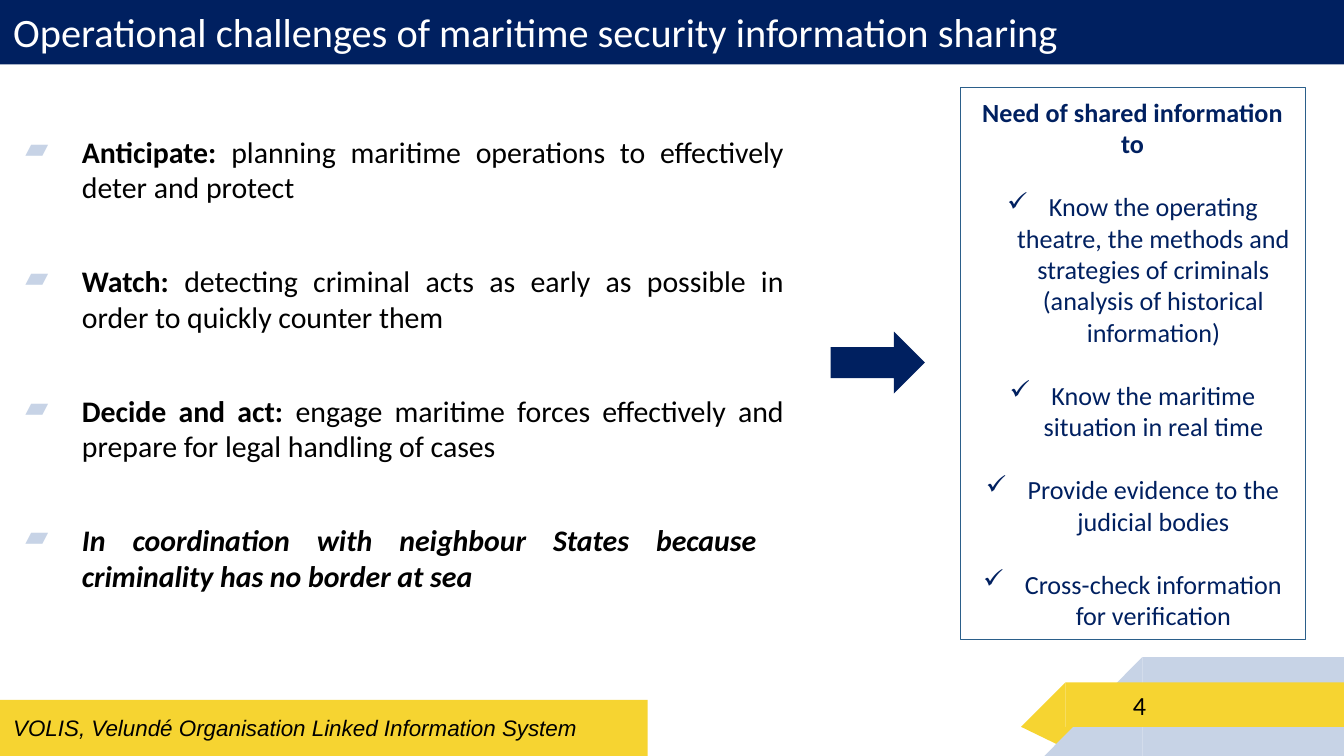
"""Build the slide on the operational challenges of maritime information sharing."""
from lxml.etree import SubElement
from pptx import Presentation
from pptx.dml.color import RGBColor
from pptx.enum.shapes import MSO_SHAPE
from pptx.enum.text import MSO_ANCHOR, MSO_AUTO_SIZE, PP_ALIGN
from pptx.oxml.ns import qn
from pptx.util import Cm, Pt

NAVY, YELLOW, PALE = "002060", "F6D431", "C7D3E6"
WHITE, BLACK, STEEL = "FFFFFF", "000000", "2B5F8A"


def draw(kind, left, top, width, height, fill, flip=False):
    shape = page.shapes.add_shape(kind, Cm(left), Cm(top), Cm(width), Cm(height))
    shape.shadow.inherit = False
    shape.fill.solid()
    shape.fill.fore_color.rgb = RGBColor.from_string(fill)
    shape.line.fill.background()
    if flip:
        shape.element.spPr.get_or_add_xfrm().set("flipH", "1")
    return shape


def write(box, text, lead="", size=14, color=BLACK, font="Calibri", bold=False,
          italic=False, align=PP_ALIGN.LEFT, before=0, bullet=None,
          bullet_color=None, indent=0, hanging=0):
    frame = box.text_frame
    frame.word_wrap = True
    frame.auto_size = MSO_AUTO_SIZE.NONE
    frame.vertical_anchor = MSO_ANCHOR.MIDDLE
    para = frame.add_paragraph() if frame.text else frame.paragraphs[0]
    para.alignment = align
    para.space_before = Pt(before)
    for words, heavy in ((lead, True), (text, bold)):
        if words:
            span = para.add_run()
            span.text = words
            span.font.name = font
            span.font.size = Pt(size)
            span.font.bold = heavy
            span.font.italic = italic
            span.font.color.rgb = RGBColor.from_string(color)
    if bullet:
        properties = para._p.get_or_add_pPr()
        properties.set("marL", str(Cm(indent)))
        properties.set("indent", str(-Cm(hanging)))
        tint = SubElement(properties, qn("a:buClr"))
        SubElement(tint, qn("a:srgbClr"), val=bullet_color or color)
        SubElement(properties, qn("a:buChar"), char=bullet)


deck = Presentation()
deck.slide_width, deck.slide_height = Cm(25.4), Cm(14.29)
page = deck.slides.add_slide(deck.slide_layouts[5])

fold = draw(MSO_SHAPE.ISOSCELES_TRIANGLE, 19.3, 13.74, 1.09, 0.36, YELLOW)
fold.adjustments[0] = 0.32
fold.rotation = 180
for slant_left, top, slant, height, color in (
    (19.74, 12.42, 1.85, 1.87, PALE),
    (19.3, 12.9, 0.84, 0.84, YELLOW),
):
    bar_left = slant_left + slant
    draw(MSO_SHAPE.RECTANGLE, bar_left, top, 25.4 - bar_left, height, color)
    draw(MSO_SHAPE.RIGHT_TRIANGLE, slant_left, top, slant, height, color, flip=True)

footer = draw(MSO_SHAPE.RECTANGLE, 0, 13.23, 12.24, 1.06, YELLOW)
write(footer, "VOLIS, Velundé Organisation Linked Information System",
      size=12, font="Arial", italic=True)

title = page.shapes.title
title.left, title.top, title.width, title.height = Cm(0), Cm(-0.03), Cm(25.4), Cm(1.25)
title.fill.solid()
title.fill.fore_color.rgb = RGBColor.from_string(NAVY)
write(title, "Operational challenges of maritime security information sharing",
      size=21.6, color=WHITE)

challenges = page.shapes.add_textbox(Cm(0.03), Cm(2.16), Cm(15.04), Cm(9.42))
for number, (lead, text) in enumerate((
    ("Anticipate: ", "planning maritime operations to effectively deter and protect"),
    ("Watch:", " detecting criminal acts as early as possible in order to quickly counter them"),
    ("Decide and act: ", "engage maritime forces effectively and prepare for legal handling of cases"),
    ("In coordination with neighbour States because  criminality has no border at sea", ""),
)):
    write(challenges, text, lead=lead, size=16, italic=not text,
          align=PP_ALIGN.JUSTIFY, before=31 if number else 6,
          bullet="▰", bullet_color=PALE, indent=1.27, hanging=1.07)

page_number = page.shapes.add_textbox(Cm(21.16), Cm(12.88), Cm(4.14), Cm(0.89))
write(page_number, "4")

draw(MSO_SHAPE.RIGHT_ARROW, 15.7, 6.27, 1.78, 1.17, NAVY)

needs = draw(MSO_SHAPE.RECTANGLE, 18.14, 1.65, 6.53, 10.44, WHITE)
needs.line.color.rgb = RGBColor.from_string(STEEL)
needs.line.width = Pt(0.25)
write(needs, "Need of shared information to", color=NAVY, bold=True, align=PP_ALIGN.CENTER)
for need in (
    "Know the operating theatre, the methods and strategies of criminals "
    "(analysis of historical information)",
    "Know the maritime situation in real time",
    "Provide evidence to the judicial bodies",
    "Cross-check information for verification",
):
    write(needs, need, color=NAVY, align=PP_ALIGN.CENTER, before=17,
          bullet="✓", indent=0.79, hanging=0.79)

for box in (footer, title, challenges, page_number):
    frame = box.text_frame
    frame.margin_left = frame.margin_right = Cm(0.25)
    frame.margin_top = frame.margin_bottom = Cm(0.25)

deck.save("out.pptx")
